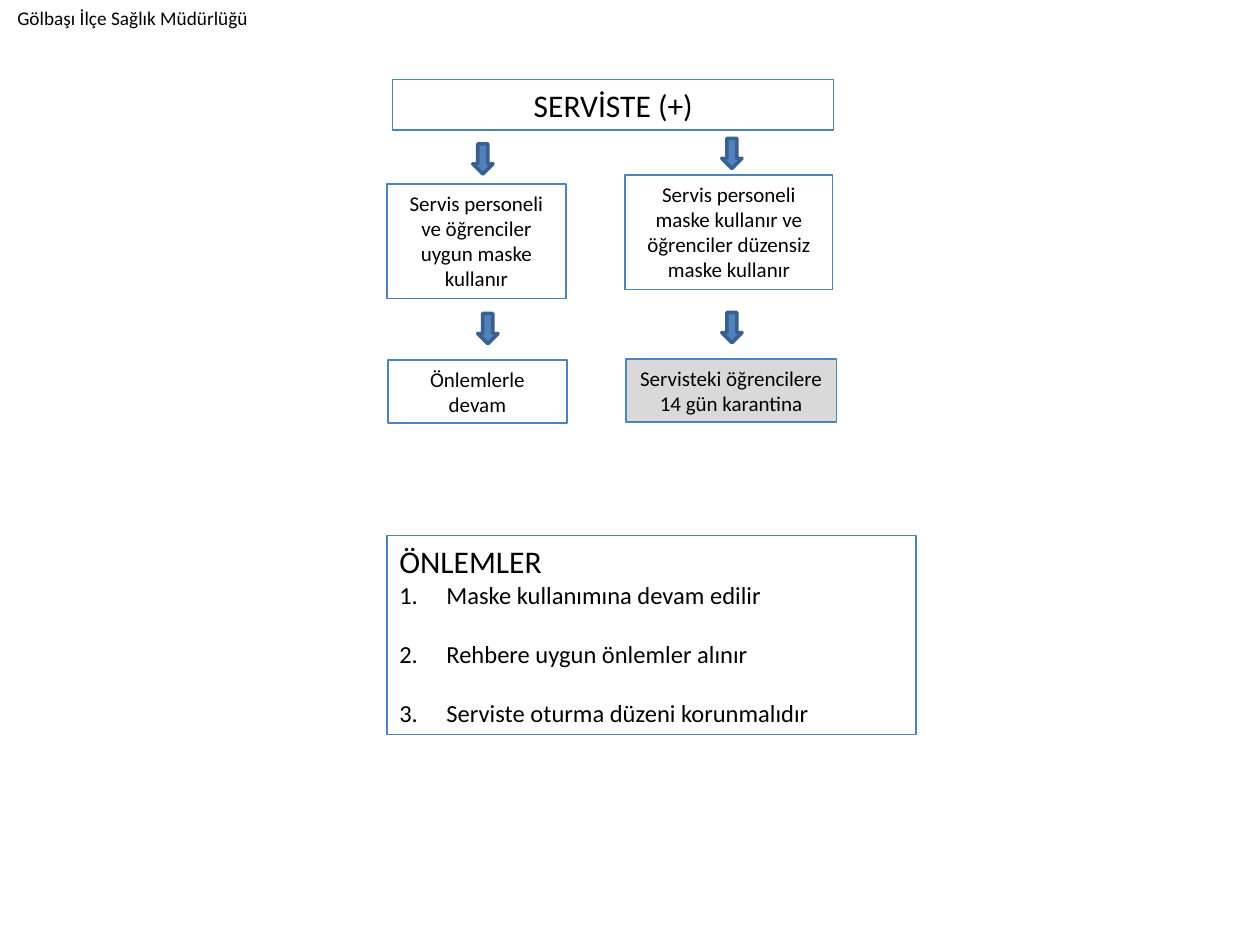
from dataclasses import dataclass

from lxml.etree import SubElement
from pptx import Presentation
from pptx.dml.color import RGBColor
from pptx.enum.shapes import MSO_SHAPE
from pptx.enum.text import MSO_ANCHOR, MSO_AUTO_SIZE, PP_ALIGN
from pptx.oxml.ns import qn
from pptx.util import Cm, Pt


@dataclass(frozen=True)
class Theme:
    font: str = "Calibri"
    ink: RGBColor = RGBColor(0x00, 0x00, 0x00)
    blue: RGBColor = RGBColor(0x4F, 0x81, 0xBD)
    dark_blue: RGBColor = RGBColor(0x3A, 0x5F, 0x8C)
    grey: RGBColor = RGBColor(0xD9, 0xD9, 0xD9)
    heading: Pt = Pt(18)
    measure: Pt = Pt(14)
    step: Pt = Pt(12)
    office: Pt = Pt(11)


theme = Theme()


def add_block(preset, position, fill, line_color, line_width):
    block = slide.shapes.add_shape(preset, *map(Cm, position))
    block.shadow.inherit = False
    if fill is None:
        block.fill.background()
    else:
        block.fill.solid()
        block.fill.fore_color.rgb = fill
    block.line.color.rgb = line_color
    block.line.width = line_width
    return block


def write(block, text, sizes, align):
    """Fill a block with text; sizes holds one type size per paragraph."""
    frame = block.text_frame
    frame.text = text
    frame.word_wrap = True
    frame.auto_size = MSO_AUTO_SIZE.SHAPE_TO_FIT_TEXT
    frame.vertical_anchor = MSO_ANCHOR.TOP
    for paragraph, size in zip(frame.paragraphs, sizes):
        paragraph.alignment = align
        for run in paragraph.runs:
            run.font.name = theme.font
            run.font.size = size
            run.font.color.rgb = theme.ink
    return frame.paragraphs


prs = Presentation()
prs.slide_width, prs.slide_height = Cm(25.4), Cm(19.05)
slide = prs.slides.add_slide(prs.slide_layouts[6])

# Decision tree: left, top, width, height
steps = [
    ("SERVİSTE (+)", (7.92, 1.6, 8.89, 1.02), theme.heading, None),
    ("Servis personeli ve öğrenciler uygun maske kullanır",
     (7.8, 3.71, 3.61, 2.31), theme.step, None),
    ("Servis personeli maske kullanır ve öğrenciler düzensiz maske kullanır",
     (12.6, 3.53, 4.19, 2.31), theme.step, None),
    ("Önlemlerle devam", (7.82, 7.26, 3.61, 1.27), theme.step, None),
    ("Servisteki öğrencilere 14 gün karantina",
     (12.62, 7.24, 4.24, 1.27), theme.step, theme.grey),
]
for text, position, size, fill in steps:
    step = add_block(MSO_SHAPE.RECTANGLE, position, fill, theme.blue, Pt(0.75))
    write(step, text, [size], PP_ALIGN.CENTER)

for left, top in [(9.53, 2.9), (9.63, 6.32), (14.55, 2.79), (14.55, 6.3)]:
    add_block(MSO_SHAPE.DOWN_ARROW, (left, top, 0.41, 0.61),
              theme.blue, theme.dark_blue, Pt(2))

# Numbered measures
measures = [
    "Maske kullanımına devam edilir",
    "Rehbere uygun önlemler alınır",
    "Serviste oturma düzeni korunmalıdır",
]
panel = add_block(MSO_SHAPE.RECTANGLE, (7.8, 10.8, 10.67, 4.01),
                  None, theme.blue, Pt(0.75))
heading, *items = write(panel, "\n".join(["ÖNLEMLER", *measures]),
                        [theme.heading] + [theme.measure] * len(measures),
                        PP_ALIGN.LEFT)
for index, item in enumerate(items):
    item.space_before = Pt(17 if index else 0)
    properties = item._p.get_or_add_pPr()
    properties.set("marL", str(Cm(0.95)))
    properties.set("indent", str(-Cm(0.95)))
    SubElement(properties, qn("a:buFont"), typeface="+mj-lt")
    SubElement(properties, qn("a:buAutoNum"), type="arabicPeriod")

office = slide.shapes.add_textbox(Cm(0.1), Cm(0), Cm(7.14), Cm(0.74))
write(office, "Gölbaşı İlçe Sağlık Müdürlüğü", [theme.office], PP_ALIGN.LEFT)

prs.save("out.pptx")
